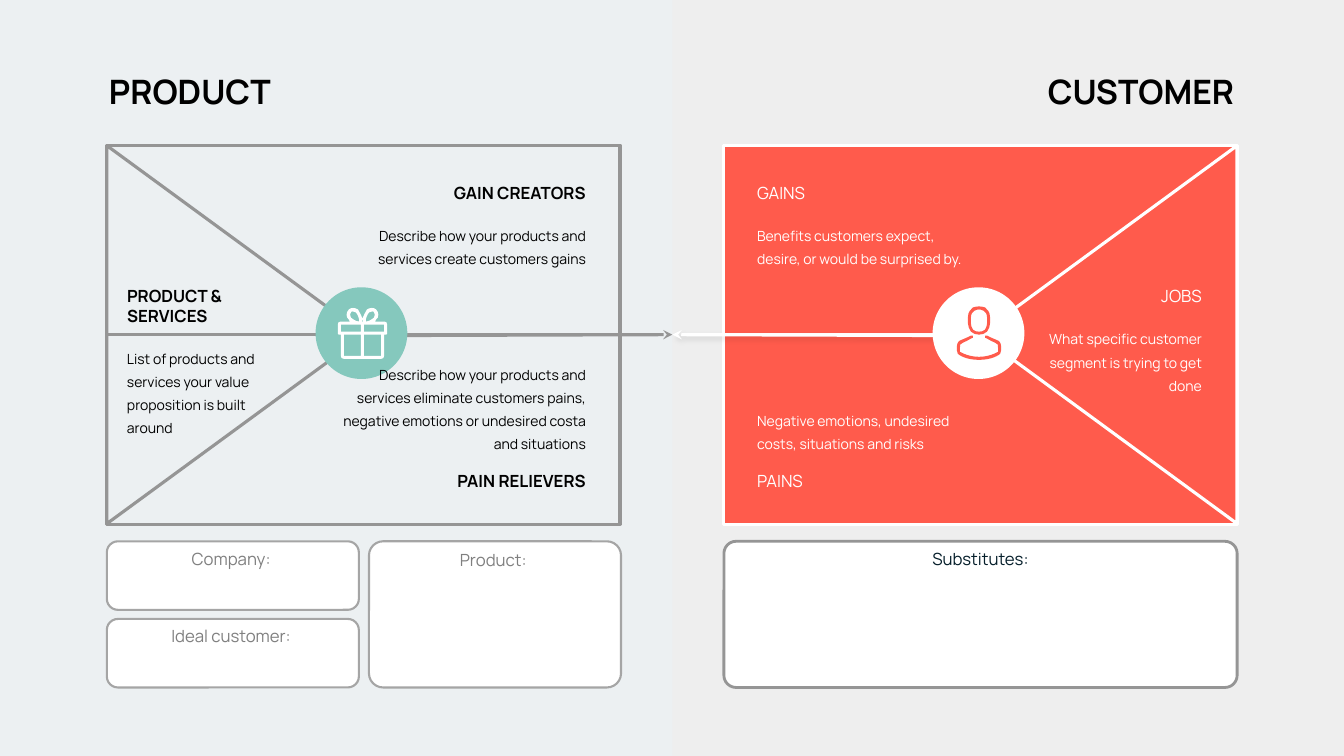
from lxml.etree import SubElement
from pptx import Presentation
from pptx.dml.color import RGBColor
from pptx.enum.shapes import MSO_CONNECTOR, MSO_SHAPE
from pptx.enum.text import MSO_ANCHOR, MSO_AUTO_SIZE, PP_ALIGN
from pptx.oxml.ns import qn
from pptx.util import Inches, Pt

FONT = "Manrope"
PALE_BLUE = RGBColor(0xEC, 0xF0, 0xF2)
PALE_GRAY = RGBColor(0xEE, 0xEE, 0xEE)
WHITE = RGBColor(0xFF, 0xFF, 0xFF)
BLACK = RGBColor(0x00, 0x00, 0x00)
NAVY = RGBColor(0x05, 0x1E, 0x2A)
RED = RGBColor(0xFF, 0x5B, 0x4C)
TEAL = RGBColor(0x85, 0xC8, 0xBD)
GRAY = RGBColor(0x95, 0x95, 0x95)
BORDER_GRAY = RGBColor(0xA5, 0xA5, 0xA5)
LABEL_GRAY = RGBColor(0x7F, 0x7F, 0x7F)

LEFT, CENTER, RIGHT = PP_ALIGN.LEFT, PP_ALIGN.CENTER, PP_ALIGN.RIGHT
TOP, MIDDLE, BOTTOM = MSO_ANCHOR.TOP, MSO_ANCHOR.MIDDLE, MSO_ANCHOR.BOTTOM

PRODUCT_X, CUSTOMER_X = 1.06, 7.18
PANEL_TOP, PANEL_WIDTH, HALF_HEIGHT = 1.44, 5.09, 1.88
TRIANGLE_BASE, TRIANGLE_DEPTH = 3.75, 2.56
HUB_SIZE = 0.91

GIFT_SPAN = 3.35 + 3.84
GIFT_OUTLINE = [
    (3.6, 3.19), (3.6, 3.15, 3.56, 3.09, 3.55, 3.07), (3.52, 3.05, 3.48, 3.05, 3.46, 3.07),
    (3.43, 3.1, 3.43, 3.15, 3.46, 3.17), (3.46, 3.18, 3.47, 3.18, 3.47, 3.19), (3.38, 3.19),
    (3.36, 3.19, 3.35, 3.2, 3.35, 3.22), (3.35, 3.31), (3.35, 3.32, 3.35, 3.32, 3.36, 3.32),
    (3.38, 3.32), (3.38, 3.53), (3.38, 3.55, 3.39, 3.56, 3.41, 3.56), (3.6, 3.56)]
GIFT_HOLES = [
    [(3.48, 3.1), (3.48, 3.09, 3.49, 3.09, 3.5, 3.09), (3.51, 3.09, 3.52, 3.09, 3.53, 3.1),
     (3.55, 3.12, 3.57, 3.18, 3.56, 3.19), (3.53, 3.19, 3.49, 3.16, 3.48, 3.15),
     (3.47, 3.13, 3.47, 3.11, 3.48, 3.1)],
    [(3.41, 3.32), (3.58, 3.32), (3.58, 3.53), (3.41, 3.53)],
    [(3.38, 3.22), (3.58, 3.22), (3.58, 3.29), (3.38, 3.29)]]

PERSON_SPAN = 9.49 + 9.93
HEAD_OUTER = [
    (9.71, 3.04), (9.7, 3.04, 9.67, 3.04, 9.65, 3.05), (9.63, 3.07, 9.6, 3.09, 9.6, 3.15),
    (9.6, 3.16, 9.59, 3.24, 9.63, 3.29), (9.65, 3.31, 9.68, 3.32, 9.71, 3.32)]
HEAD_INNER = [
    (9.71, 3.07), (9.69, 3.07, 9.63, 3.08, 9.63, 3.15), (9.63, 3.16, 9.62, 3.23, 9.65, 3.27),
    (9.67, 3.29, 9.69, 3.29, 9.71, 3.29)]
SHOULDERS = [
    (9.71, 3.54), (9.61, 3.54, 9.54, 3.5, 9.52, 3.49), (9.52, 3.48, 9.52, 3.47, 9.52, 3.46),
    (9.52, 3.43, 9.52, 3.4, 9.55, 3.4), (9.6, 3.38, 9.64, 3.35, 9.65, 3.35),
    (9.65, 3.34, 9.65, 3.34, 9.65, 3.33), (9.64, 3.32, 9.64, 3.32, 9.63, 3.33),
    (9.63, 3.33, 9.59, 3.35, 9.54, 3.37), (9.49, 3.38, 9.49, 3.43, 9.49, 3.46),
    (9.49, 3.46, 9.49, 3.49, 9.5, 3.51), (9.51, 3.52, 9.58, 3.57, 9.71, 3.57)]


def write(frame, text, size=10, color=BLACK, bold=False, align=LEFT, anchor=TOP,
          spacing=None, insets=(0, 0, 0, 0)):
    """Put one formatted paragraph into a text frame."""
    frame.word_wrap = True
    frame.vertical_anchor = anchor
    frame.margin_left, frame.margin_top, frame.margin_right, frame.margin_bottom = map(Inches, insets)
    paragraph = frame.paragraphs[0]
    paragraph.text = text
    paragraph.alignment = align
    paragraph.line_spacing = spacing
    font = paragraph.runs[0].font
    font.name, font.size, font.bold = FONT, Pt(size), bold
    font.color.rgb = color


def add_text(slide, box, text, **style):
    """Add a text box that fits its text."""
    frame = slide.shapes.add_textbox(*map(Inches, box)).text_frame
    write(frame, text, **style)
    frame.auto_size = MSO_AUTO_SIZE.SHAPE_TO_FIT_TEXT


def paint(shape, fill=None, line=None, width=2.25):
    """Set the fill and outline of a shape and drop its shadow."""
    shape.shadow.inherit = False
    if fill is None:
        shape.fill.background()
    else:
        shape.fill.solid()
        shape.fill.fore_color.rgb = fill
    if line is None:
        shape.line.fill.background()
    else:
        shape.line.color.rgb = line
        shape.line.width = Pt(width)


def add_block(slide, kind, box, **look):
    """Add a painted preset shape."""
    block = slide.shapes.add_shape(kind, *map(Inches, box))
    paint(block, **look)
    return block


def add_field(slide, box, label, radius=0.11, color=LABEL_GRAY, line=BORDER_GRAY, width=1.5):
    """Add a rounded white field with its label at the top."""
    field = add_block(slide, MSO_SHAPE.ROUNDED_RECTANGLE, box, fill=WHITE, line=line, width=width)
    field.adjustments[0] = radius / min(box[2:])
    write(field.text_frame, label, size=12, color=color, align=CENTER, insets=(0, 0.04, 0, 0))


def add_panel(slide, left, apex_left, rotation, **look):
    """Add two stacked halves and the sideways triangle over them."""
    for row in range(2):
        add_block(slide, MSO_SHAPE.RECTANGLE,
                  (left, PANEL_TOP + row * HALF_HEIGHT, PANEL_WIDTH, HALF_HEIGHT), **look)
    triangle_x = apex_left - (TRIANGLE_BASE - TRIANGLE_DEPTH) / 2
    triangle_y = PANEL_TOP + HALF_HEIGHT - TRIANGLE_DEPTH / 2
    triangle = add_block(slide, MSO_SHAPE.ISOSCELES_TRIANGLE,
                         (triangle_x, triangle_y, TRIANGLE_BASE, TRIANGLE_DEPTH), **look)
    triangle.rotation = rotation


def add_arrow(slide, start_x, color, shadow=False):
    """Add an arrow from a hub to the border between the two sides."""
    ends = map(Inches, (start_x, 3.33, 6.67, 3.32))
    arrow = slide.shapes.add_connector(MSO_CONNECTOR.STRAIGHT, *ends)
    arrow.line.color.rgb = color
    arrow.line.width = Pt(2.25)
    SubElement(arrow.line._get_or_add_ln(), qn("a:tailEnd"), type="stealth")
    effects = SubElement(arrow._element.spPr, qn("a:effectLst"))
    if shadow:
        outer = SubElement(effects, qn("a:outerShdw"), blurRad=str(Pt(4)), dist=str(Pt(3)),
                           dir=str(45 * 60000))
        tint = SubElement(outer, qn("a:srgbClr"), val=str(BLACK))
        SubElement(tint, qn("a:alpha"), val="12000")


def trace(segments):
    """List the control points of an outline, three for each segment."""
    points = [segments[0]]
    for segment in segments[1:]:
        if len(segment) == 2:
            points += [points[-1], segment, segment]
        else:
            points += [segment[:2], segment[2:4], segment[4:]]
    return points


def mirror(points, span):
    """Reflect points across the middle of a span."""
    return [(span - x, y) for x, y in points]


def whole(half, span):
    """Complete a half outline with its reflection."""
    points = trace(half)
    return points + mirror(points[:-1], span)[::-1]


def add_icon(slide, contours, color):
    """Add a filled freeform of cubic curves in which inner contours are holes."""
    contours = [[(Inches(x), Inches(y)) for x, y in contour] for contour in contours]
    builder = slide.shapes.build_freeform(*contours[0][0])
    for number, contour in enumerate(contours):
        if number:
            builder.move_to(*contour[0])
        builder.add_line_segments(contour[1:], close=True)
    icon = builder.convert_to_shape()
    lines = list(icon._element.iter(qn("a:lnTo")))
    for first, *others in zip(lines[::3], lines[1::3], lines[2::3]):
        first.tag = qn("a:cubicBezTo")
        for line in others:
            first.append(line[0])
            line.getparent().remove(line)
    paint(icon, fill=color)


def main():
    """Build the value proposition slide."""
    deck = Presentation()
    deck.slide_width, deck.slide_height = Inches(13.33), Inches(7.5)
    slide = deck.slides.add_slide(deck.slide_layouts[6])
    slide.background.fill.solid()
    slide.background.fill.fore_color.rgb = PALE_BLUE
    add_block(slide, MSO_SHAPE.RECTANGLE, (6.67, 0, 6.67, 7.5), fill=PALE_GRAY)

    add_field(slide, (3.66, 5.37, 2.5, 1.45), "Product: ", radius=0.14)
    add_field(slide, (PRODUCT_X, 5.37, 2.5, 0.68), "Company: ")
    add_field(slide, (PRODUCT_X, 6.14, 2.5, 0.68), "Ideal customer: ")
    add_field(slide, (CUSTOMER_X, 5.37, PANEL_WIDTH, 1.45), "Substitutes:", radius=0.12,
              color=NAVY, line=GRAY, width=2)

    add_panel(slide, CUSTOMER_X, CUSTOMER_X + PANEL_WIDTH - TRIANGLE_DEPTH, 270, fill=RED, line=WHITE)
    add_panel(slide, PRODUCT_X, PRODUCT_X, 90, line=GRAY)
    add_arrow(slide, 3.61, GRAY)
    add_arrow(slide, 9.71, WHITE, shadow=True)

    add_block(slide, MSO_SHAPE.OVAL, (3.13, 2.85, HUB_SIZE, HUB_SIZE), fill=TEAL)
    holes = [trace(hole) for hole in GIFT_HOLES]
    add_icon(slide, [whole(GIFT_OUTLINE, GIFT_SPAN), *holes,
                     *(mirror(hole, GIFT_SPAN) for hole in holes)], WHITE)
    add_block(slide, MSO_SHAPE.OVAL, (9.25, 2.85, HUB_SIZE, HUB_SIZE), fill=WHITE)
    add_icon(slide, [whole(HEAD_OUTER, PERSON_SPAN), whole(HEAD_INNER, PERSON_SPAN)], RED)
    add_icon(slide, [whole(SHOULDERS, PERSON_SPAN)], RED)

    for box, text, color, align in (
            ((4.07, 1.81, 1.74, 0.2), "GAIN CREATORS", BLACK, RIGHT),
            ((4.07, 4.67, 1.74, 0.2), "PAIN RELIEVERS", BLACK, RIGHT),
            ((1.26, 2.83, 1.61, 0.4), "PRODUCT & SERVICES", BLACK, LEFT),
            ((7.51, 1.81, 1.65, 0.2), "GAINS", WHITE, LEFT),
            ((7.51, 4.67, 1.65, 0.2), "PAINS", WHITE, LEFT),
            ((10.32, 2.83, 1.6, 0.2), "JOBS", WHITE, RIGHT)):
        add_text(slide, box, text, size=12, color=color, bold=color == BLACK, align=align, anchor=MIDDLE)

    for box, text, color, align, anchor in (
            ((3.5, 2.19, 2.31, 0.39),
             "Describe how your products and services create customers gains", BLACK, RIGHT, TOP),
            ((3.34, 3.71, 2.47, 0.78),
             "Describe how your products and services eliminate customers pains, "
             "negative emotions or undesired costa and situations", BLACK, RIGHT, BOTTOM),
            ((1.26, 3.41, 1.33, 0.78),
             "List of products and services your value proposition is built around", BLACK, LEFT, TOP),
            ((7.51, 2.19, 2.16, 0.58),
             "Benefits customers expect, desire, or would be surprised by.", WHITE, LEFT, TOP),
            ((7.51, 4.1, 2.16, 0.39),
             "Negative emotions, undesired costs, situations and risks", WHITE, LEFT, BOTTOM),
            ((10.38, 3.22, 1.54, 0.58),
             "What specific customer segment is trying to get done", WHITE, RIGHT, TOP)):
        add_text(slide, box, text, color=color, align=align, anchor=anchor, spacing=1.38)

    for left, title, align in ((1.05, "PRODUCT", LEFT), (8.32, "CUSTOMER", RIGHT)):
        add_text(slide, (left, 0.67, 3.95, 0.46), title, size=24, bold=True, align=align,
                 insets=(0.03, 0.03, 0.03, 0.03))
    deck.save("out.pptx")


if __name__ == "__main__":
    main()
